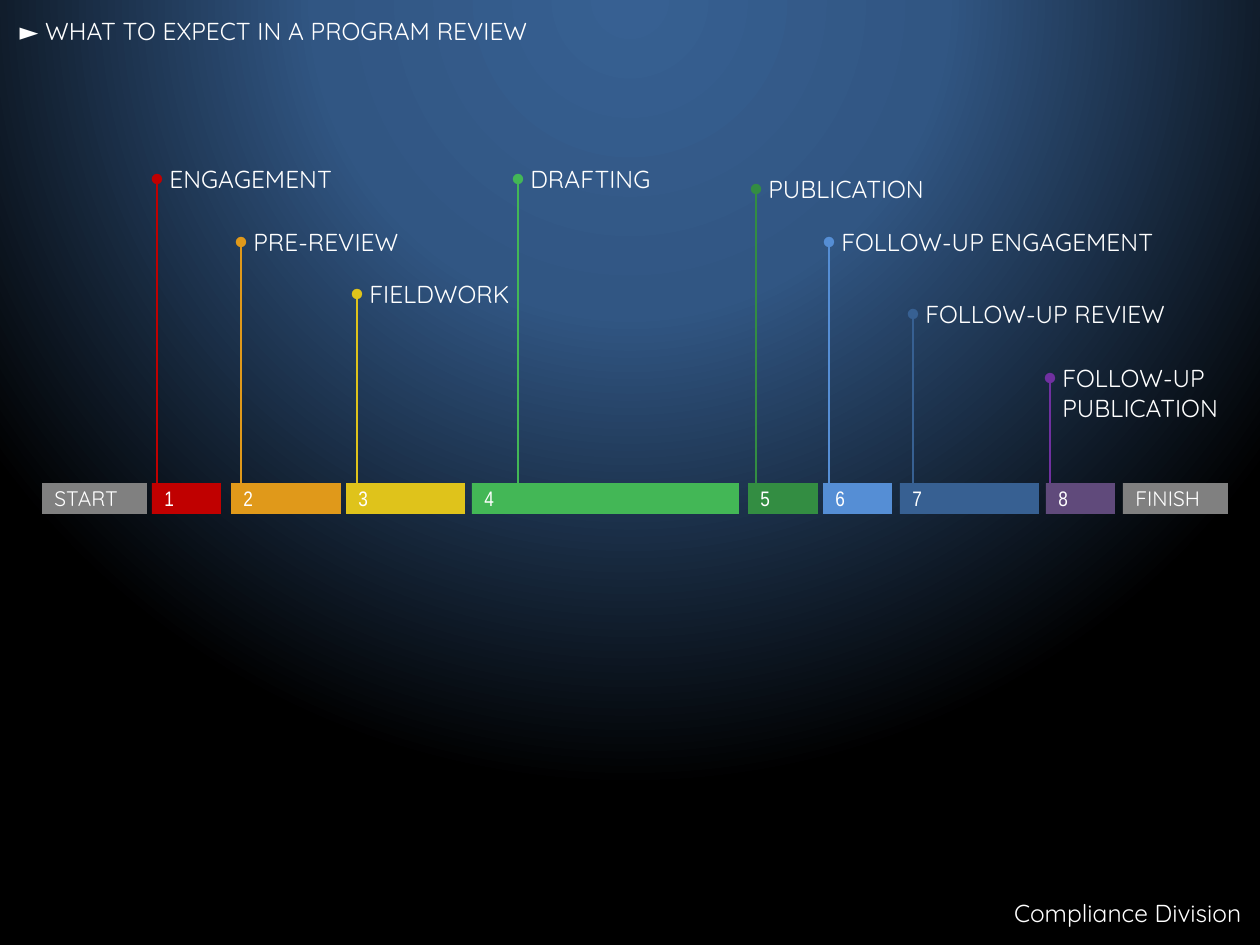
from collections import namedtuple
from dataclasses import dataclass

from lxml.etree import SubElement
from pptx import Presentation
from pptx.dml.color import RGBColor
from pptx.enum.shapes import MSO_CONNECTOR as Connector, MSO_SHAPE as Shape
from pptx.enum.text import MSO_ANCHOR as Anchor, MSO_AUTO_SIZE as AutoSize, PP_ALIGN as Align
from pptx.oxml.ns import qn
from pptx.util import Emu, Pt

PX = 914400 / 126


@dataclass(frozen=True)
class Theme:
    """Colours, fonts and sizes of the slide."""
    white: str = "FFFFFF"
    grey: str = "808080"
    glow: tuple = ((0, "376092"), (40, "315683"), (100, "000000"))
    font: str = "Quicksand"
    number_font: str = "Arial Narrow"
    label_size: int = 14
    bar_size: int = 12
    line_width: float = 0.75


Phase = namedtuple("Phase", "name stem_x stem_top label_width bar_left bar_width stem_color bar_color")

PHASES = [
    Phase("ENGAGEMENT", 157, 179, 199, 152, 69, "C00000", "C00000"),
    Phase("PRE-REVIEW", 241, 242, 199, 231, 110, "E0991A", "E0991A"),
    Phase("FIELDWORK", 357, 294, 199, 346, 119, "DFC31B", "DFC31B"),
    Phase("DRAFTING", 518, 179, 238, 472, 267, "43B756", "43B756"),
    Phase("PUBLICATION", 756, 189, 199, 748, 70, "338D42", "338D42"),
    Phase("FOLLOW-UP ENGAGEMENT", 829, 242, 399, 823, 69, "558ED5", "558ED5"),
    Phase("FOLLOW-UP REVIEW", 913, 314, 315, 900, 139, "376092", "376092"),
    Phase("FOLLOW-UP PUBLICATION", 1050, 378, 199, 1046, 69, "7030A0", "604A7B"),
]
BAR_TOP, BAR_HEIGHT = 483, 31
LABEL_RISE, LABEL_HEIGHT = 21, 43


def px(*lengths):
    """Turn pixel lengths into EMU."""
    return [Emu(round(length * PX)) for length in lengths]


def write(frame, text, *, font, size, color, align=Align.LEFT, anchor=Anchor.TOP, grow=True):
    """Fill a text frame with one formatted paragraph."""
    frame.word_wrap = True
    frame.auto_size = AutoSize.SHAPE_TO_FIT_TEXT if grow else AutoSize.NONE
    frame.vertical_anchor = anchor
    para = frame.paragraphs[0]
    para.alignment = align
    span = para.add_run()
    span.text = text
    span.font.name = font
    span.font.size = Pt(size)
    span.font.color.rgb = RGBColor.from_string(color)


class Timeline:
    """Draws the elements of the current page in one theme."""

    def __init__(self, page, theme):
        """Keep the page and its theme."""
        self.page = page
        self.theme = theme

    def backdrop(self):
        """Paint the radial glow behind the page."""
        self.page.background.fill.gradient()
        gradient = next(self.page.element.iter(qn("a:gradFill")))
        for child in list(gradient):
            gradient.remove(child)
        stops = SubElement(gradient, qn("a:gsLst"))
        for percent, color in self.theme.glow:
            stop = SubElement(stops, qn("a:gs"), pos=str(percent * 1000))
            SubElement(stop, qn("a:srgbClr"), val=color)
        circle = SubElement(gradient, qn("a:path"), path="circle")
        SubElement(circle, qn("a:fillToRect"), l="50000", t="-80000", r="50000", b="180000")

    def title(self, text, left, top, width, height):
        """Place and format the title placeholder."""
        box = self.page.shapes.title
        box.left, box.top, box.width, box.height = px(left, top, width, height)
        write(box.text_frame, text, font=self.theme.font,
              size=self.theme.label_size, color=self.theme.white)

    def label(self, text, left, top, width, height=LABEL_HEIGHT, align=Align.LEFT):
        """Add a free text label."""
        box = self.page.shapes.add_textbox(*px(left, top, width, height))
        write(box.text_frame, text, font=self.theme.font,
              size=self.theme.label_size, color=self.theme.white, align=align)

    def stem(self, x, top, color):
        """Add a line rising from the bar to a round head."""
        foot = BAR_TOP + BAR_HEIGHT // 2
        line = self.page.shapes.add_connector(Connector.STRAIGHT, *px(x, foot, x, top))
        line.line.color.rgb = RGBColor.from_string(color)
        line.line.width = Pt(self.theme.line_width)
        properties = line.element.spPr
        SubElement(properties.find(qn("a:ln")), qn("a:tailEnd"), type="oval")
        SubElement(properties, qn("a:effectLst"))

    def bar(self, text, left, width, color, font):
        """Add one segment of the timeline."""
        box = self.page.shapes.add_shape(Shape.RECTANGLE, *px(left, BAR_TOP, width, BAR_HEIGHT))
        box.shadow.inherit = False
        box.fill.solid()
        box.fill.fore_color.rgb = RGBColor.from_string(color)
        box.line.fill.background()
        write(box.text_frame, text, font=font, size=self.theme.bar_size,
              color=self.theme.white, anchor=Anchor.MIDDLE, grow=False)


def main():
    """Build the program review timeline."""
    theme = Theme()
    deck = Presentation()
    deck.slide_width, deck.slide_height = px(1260, 945)
    timeline = Timeline(deck.slides.add_slide(deck.slide_layouts[5]), theme)
    timeline.backdrop()
    timeline.title("► WHAT TO EXPECT IN A PROGRAM REVIEW", 7, 10, 599, LABEL_HEIGHT)
    for phase in PHASES:
        timeline.stem(phase.stem_x, phase.stem_top, phase.stem_color)
        height = 72 if phase is PHASES[-1] else LABEL_HEIGHT
        timeline.label(phase.name, phase.stem_x, phase.stem_top - LABEL_RISE, phase.label_width, height)
    timeline.bar("START", 42, 105, theme.grey, theme.font)
    for number, phase in enumerate(PHASES, 1):
        timeline.bar(str(number), phase.bar_left, phase.bar_width, phase.bar_color, theme.number_font)
    timeline.bar("FINISH", 1123, 105, theme.grey, theme.font)
    timeline.label("Compliance Division", 804, 892, 450, align=Align.RIGHT)
    deck.save("out.pptx")


if __name__ == "__main__":
    main()
